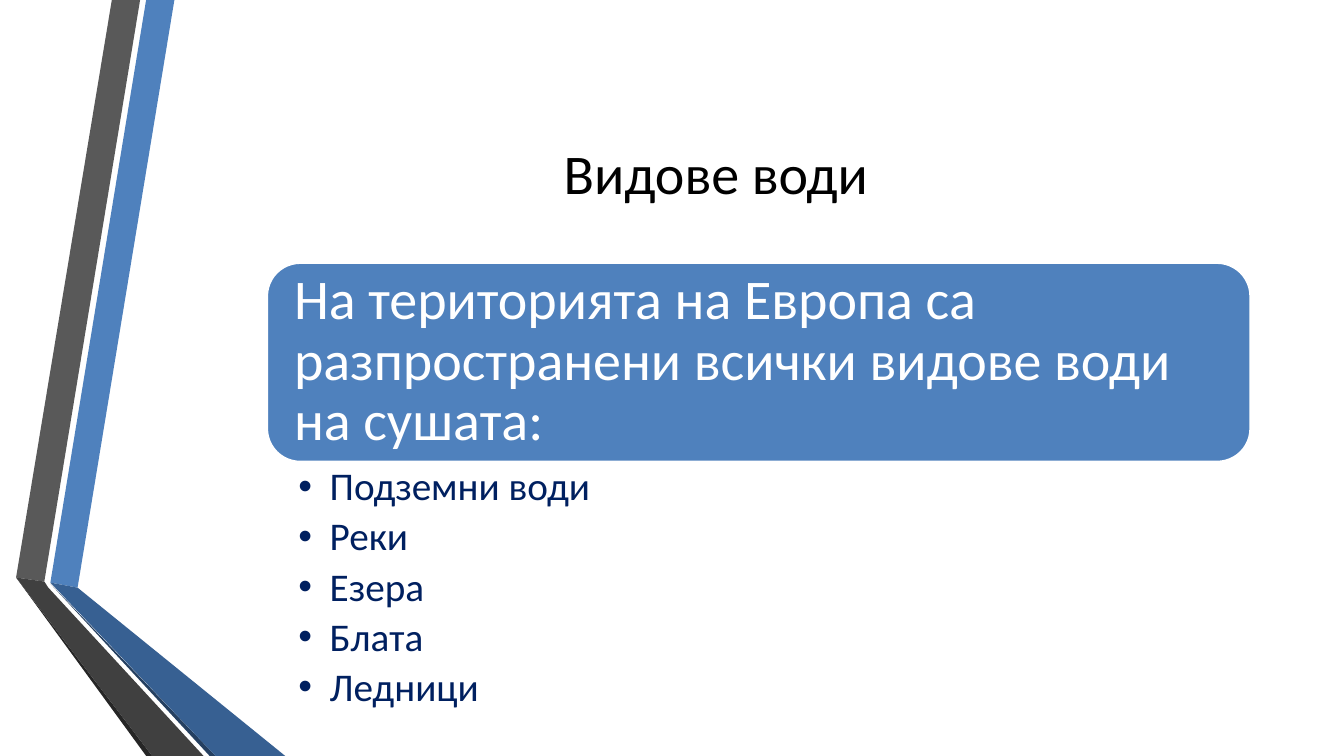
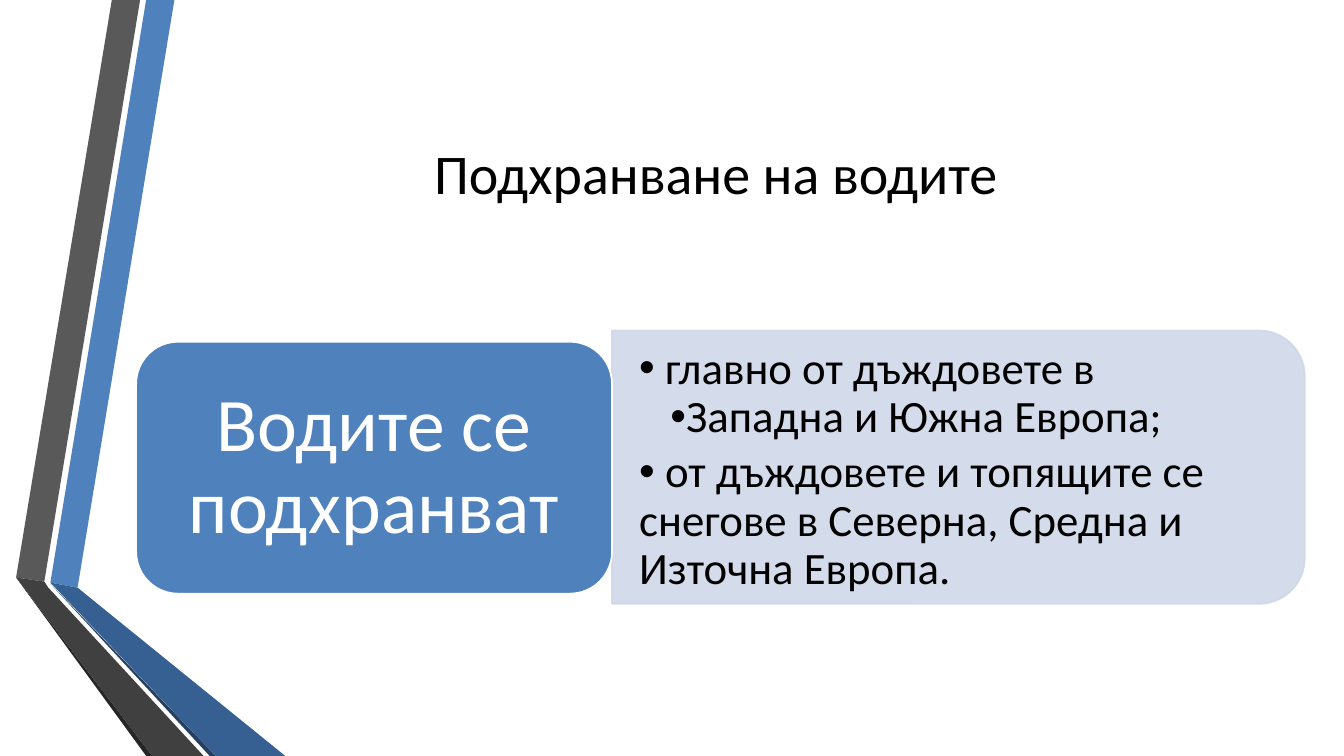
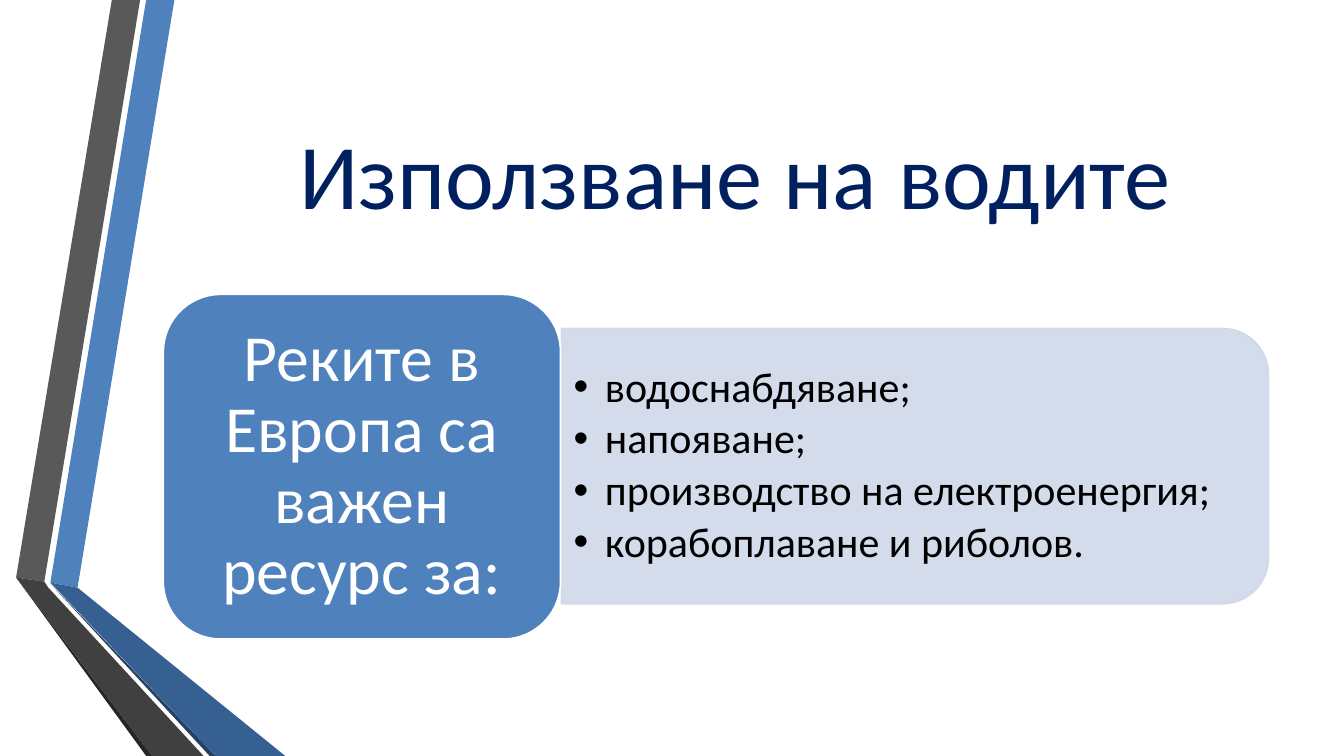
from lxml.etree import SubElement
from pptx import Presentation
from pptx.dml.color import RGBColor
from pptx.enum.shapes import MSO_SHAPE
from pptx.enum.text import MSO_ANCHOR, MSO_AUTO_SIZE, PP_ALIGN
from pptx.oxml.ns import qn
from pptx.util import Inches, Pt

FONT = "Calibri"
BLACK = RGBColor(0x00, 0x00, 0x00)
WHITE = RGBColor(0xFF, 0xFF, 0xFF)
NAVY = RGBColor(0x00, 0x20, 0x60)
BLUE = RGBColor(0x4F, 0x81, 0xBD)
PALE_BLUE = RGBColor(0xD0, 0xD8, 0xE8)
MID_BLUE = RGBColor(0x37, 0x60, 0x92)
DEEP_BLUE = RGBColor(0x25, 0x40, 0x61)
GRAY = RGBColor(0x59, 0x59, 0x59)
DARK_GRAY = RGBColor(0x40, 0x40, 0x40)
CHARCOAL = RGBColor(0x26, 0x26, 0x26)

RIBBONS = [
    (BLUE, [(0.5, 5.78), (0.77, 5.83), (1.73, 0), (1.45, 0)]),
    (GRAY, [(1.39, 0), (1.11, 0), (0.16, 5.73), (0.44, 5.77)]),
    (CHARCOAL, [(0.16, 5.73), (1.45, 7.5), (1.51, 7.5)]),
    (DEEP_BLUE, [(0.5, 5.79), (2.08, 7.5), (2.14, 7.5)]),
    (MID_BLUE, [(0.5, 5.78), (2.14, 7.5), (2.83, 7.5), (0.77, 5.83)]),
    (DARK_GRAY, [(0.16, 5.73), (1.51, 7.5), (2.02, 7.5), (0.48, 5.83), (0.44, 5.77)]),
]


def set_all(target, values):
    for name, value in values.items():
        setattr(target, name, value)


def add_ribbons(slide):
    """Build the ribbons and move them to the layout, behind its placeholders."""
    layout_tree = slide.slide_layout.shapes.element
    for position, (color, points) in enumerate(RIBBONS, start=2):
        corners = [(Inches(x), Inches(y)) for x, y in points]
        builder = slide.shapes.build_freeform(*corners[0])
        builder.add_line_segments(corners[1:], close=True)
        ribbon = builder.convert_to_shape()
        ribbon.shadow.inherit = False
        ribbon.fill.solid()
        ribbon.fill.fore_color.rgb = color
        ribbon.line.fill.background()
        layout_tree.insert(position, ribbon.element)


def format_frame(frame, anchor, margins):
    left, top, right, bottom = (Inches(margin) for margin in margins)
    set_all(frame, dict(word_wrap=True, auto_size=MSO_AUTO_SIZE.NONE, vertical_anchor=anchor,
                        margin_left=left, margin_top=top,
                        margin_right=right, margin_bottom=bottom))


def write(paragraph, text, size, color, **settings):
    run = paragraph.add_run()
    run.text = text
    set_all(run.font, dict(name=FONT, size=Pt(size)))
    run.font.color.rgb = color
    set_all(paragraph, settings)


def add_title(slide, text, box=(1.62, 0.75, 10.96, 1.92), size=40, color=BLACK):
    title = slide.shapes.title
    set_all(title, dict(zip(("left", "top", "width", "height"), map(Inches, box))))
    format_frame(title.text_frame, MSO_ANCHOR.MIDDLE, (0.1, 0.05, 0.1, 0.05))
    write(title.text_frame.paragraphs[0], text, size, color, alignment=PP_ALIGN.CENTER)


def add_box(slide, preset, box, fill, line):
    shape = slide.shapes.add_shape(preset, *map(Inches, box))
    shape.shadow.inherit = False
    shape.fill.solid()
    shape.fill.fore_color.rgb = fill
    shape.line.color.rgb = line
    shape.line.width = Pt(1.25)
    return shape


def add_card(slide, box, text, size, margins, alignment=PP_ALIGN.CENTER):
    card = add_box(slide, MSO_SHAPE.ROUNDED_RECTANGLE, box, BLUE, WHITE)
    format_frame(card.text_frame, MSO_ANCHOR.MIDDLE, margins)
    write(card.text_frame.paragraphs[0], text, size, WHITE,
          alignment=alignment, line_spacing=0.9)


def add_panel(slide, left, top, width, height):
    """Add a translucent panel rounded on its right side, by a quarter turn."""
    shift = (width - height) / 2
    panel = add_box(slide, MSO_SHAPE.ROUND_2_SAME_RECTANGLE,
                    (left + shift, top - shift, height, width), PALE_BLUE, PALE_BLUE)
    panel.rotation = 90
    for color in panel.element.spPr.iter(qn("a:srgbClr")):
        SubElement(color, qn("a:alpha"), val="90000")


def add_bullets(slide, box, items, size, color, margins, gap, anchor=MSO_ANCHOR.MIDDLE):
    """Add a list of (text, left margin, first-line indent); gap is a share of the size."""
    frame = slide.shapes.add_textbox(*map(Inches, box)).text_frame
    format_frame(frame, anchor, margins)
    for number, (text, margin, indent) in enumerate(items):
        paragraph = frame.add_paragraph() if number else frame.paragraphs[0]
        write(paragraph, text, size, color, line_spacing=0.9, space_after=Pt(size * gap))
        properties = paragraph._p.get_or_add_pPr()
        properties.set("marL", str(Inches(margin)))
        properties.set("indent", str(Inches(indent)))
        SubElement(properties, qn("a:buFont"), typeface="Arial")
        SubElement(properties, qn("a:buChar"), char="•")
    return frame


def hanging(*texts):
    return [(text, 0.31, -0.31) for text in texts]


def build_water_types(slide):
    add_title(slide, "Видове води")
    add_card(slide, (2.65, 2.61, 9.75, 1.97),
             "На територията на Европа са разпространени всички видове води на сушата:",
             40, (0.17,) * 4, PP_ALIGN.LEFT)
    add_bullets(slide, (2.65, 4.59, 9.75, 2.15),
                hanging("Подземни води", "Реки", "Езера", "Блата", "Ледници"),
                28, NAVY, (0.31, 0.04, 0.22, 0.04), 0.2, MSO_ANCHOR.TOP)


def build_water_sources(slide):
    add_title(slide, "Подхранване на водите")
    add_panel(slide, 6.07, 3.28, 6.87, 2.71)
    frame = add_bullets(slide, (6.07, 3.41, 6.74, 2.45), [
        (" главно от дъждовете в", 0, 0),
        ("Западна и Южна Европа;", 0, 0.31),
        (" от дъждовете и топящите се снегове в Северна, Средна и Източна Европа.", 0, 0),
    ], 32, BLACK, (0.27, 0.14, 0.27, 0.14), 0.15)
    set_all(frame.paragraphs[0], dict(line_spacing=1.0, space_after=Pt(0)))
    add_card(slide, (1.35, 3.39, 4.72, 2.5), "Водите се подхранват",
             54, (0.23, 0.11, 0.23, 0.11))


def build_water_uses(slide):
    add_title(slide, "Използване на водите", (1.4, 0.75, 11.79, 1.92), 66, NAVY)
    add_panel(slide, 5.57, 3.26, 7.01, 2.73)
    add_bullets(slide, (5.57, 3.39, 6.88, 2.47),
                hanging("водоснабдяване;", "напояване;",
                        "производство на електроенергия;", "корабоплаване и риболов."),
                30, BLACK, (0.12, 0.06, 0.12, 0.06), 0.15)
    add_card(slide, (1.62, 2.92, 3.94, 3.42), "Реките в Европа са важен ресурс за:",
             47, (0.2, 0.1, 0.2, 0.1))


def main():
    presentation = Presentation()
    set_all(presentation, dict(slide_width=Inches(13.33), slide_height=Inches(7.5)))
    title_only = presentation.slide_layouts[5]
    builders = (build_water_types, build_water_sources, build_water_uses)
    slides = [presentation.slides.add_slide(title_only) for _ in builders]
    add_ribbons(slides[0])
    for build, slide in zip(builders, slides):
        build(slide)
    presentation.save("out.pptx")


if __name__ == "__main__":
    main()
